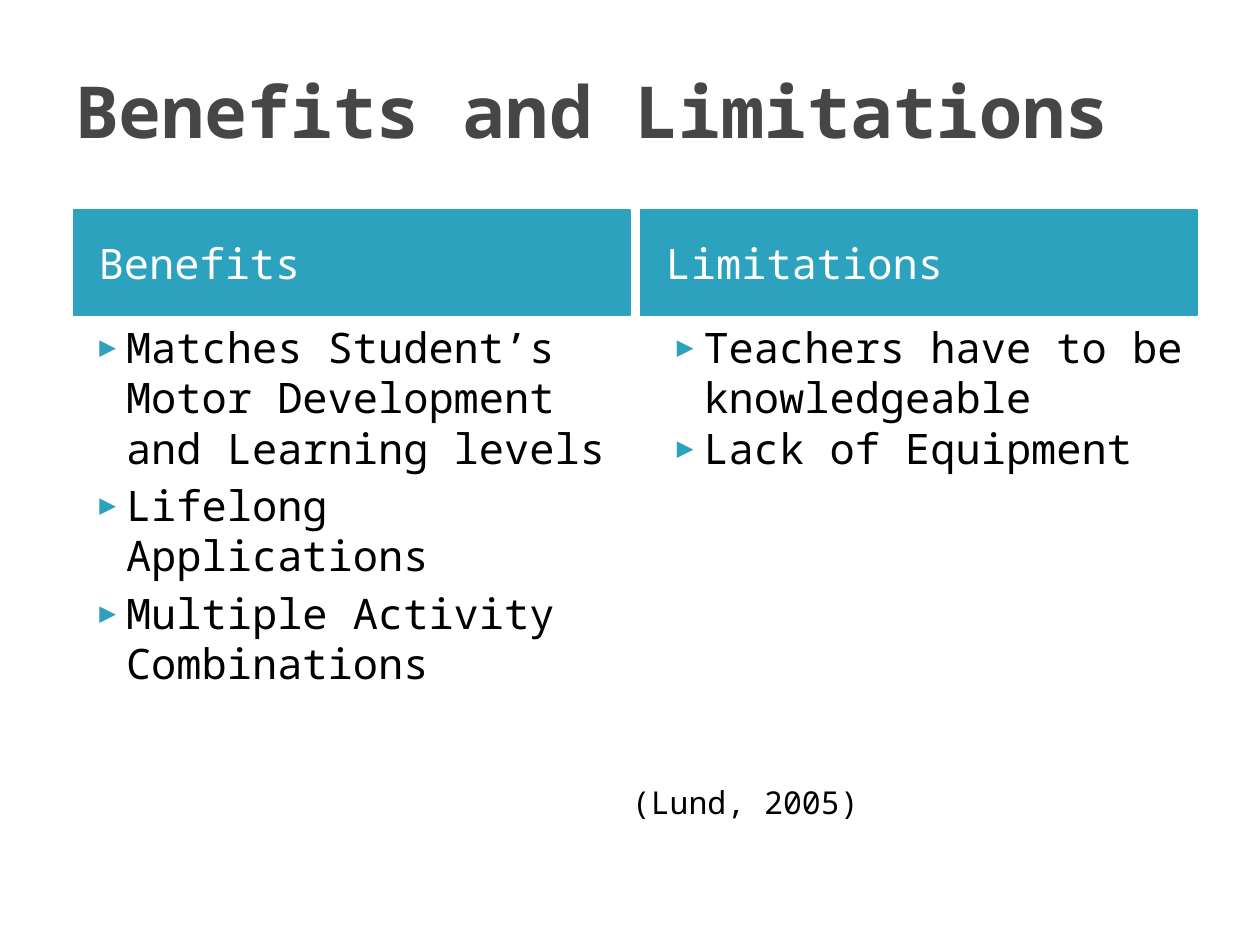
import pptx
import pptx.util
import pptx.dml.color
import pptx.enum.text
import pptx.oxml
import pptx.oxml.ns

Pt = pptx.util.Pt
Anchor = pptx.enum.text.MSO_ANCHOR
Fit = pptx.enum.text.MSO_AUTO_SIZE
Align = pptx.enum.text.PP_ALIGN


class Deck:
    """Holds the style and the current slide, with a method per kind of element."""

    font = "Noto Sans Mono"
    hues = {"title": "464646", "teal": "2DA2BF", "white": "FFFFFF", "black": "000000"}

    def __init__(self, wide, high):
        self.prs = pptx.Presentation()
        self.prs.slide_width, self.prs.slide_height = Pt(wide), Pt(high)

    def start(self, layout):
        self.slide = self.prs.slides.add_slide(self.prs.slide_layouts[layout])
        self.holders = {p.placeholder_format.idx: p for p in self.slide.placeholders}

    def hue(self, name):
        return pptx.dml.color.RGBColor.from_string(self.hues[name])

    def apply(self, item, values):
        for name, value in values.items():
            setattr(item, name, value)

    def place(self, shape, box):
        names = ("left", "top", "width", "height")
        self.apply(shape, dict(zip(names, map(Pt, box))))

    def fill(self, shape, lines, size, hue, bold=False, gap=0, bullet=False, **frame):
        text = shape.text_frame
        self.apply(text, {"word_wrap": True, "auto_size": Fit.NONE, **frame})
        for i, line in enumerate(lines):
            para = text.add_paragraph() if i else text.paragraphs[0]
            if bullet:
                self.mark(para)
            self.apply(para, {"alignment": Align.LEFT, "space_before": Pt(gap if i else 0)})
            run = para.add_run()
            run.text = line
            self.apply(run.font, {"name": self.font, "size": Pt(size), "bold": bold})
            run.font.color.rgb = self.hue(hue)

    def mark(self, para):
        props = para._p.get_or_add_pPr()
        props.set("marL", str(Pt(28.8)))
        props.set("indent", str(-Pt(20.2)))
        space = pptx.oxml.ns.nsdecls("a")
        for part in (
            f'<a:buClr {space}><a:srgbClr val="{self.hues["teal"]}"/></a:buClr>',
            f'<a:buSzPct {space} val="68000"/>',
            f'<a:buFont {space} typeface="{self.font}"/>',
            f'<a:buChar {space} char="▶"/>',
        ):
            props.append(pptx.oxml.parse_xml(part))

    def title(self, words, box):
        shape = self.slide.shapes.title
        self.place(shape, box)
        self.fill(shape, [words], 41, "title", bold=True, vertical_anchor=Anchor.MIDDLE)

    def header(self, idx, words, box):
        shape = self.holders[idx]
        self.place(shape, box)
        shape.fill.solid()
        shape.fill.fore_color.rgb = shape.line.color.rgb = self.hue("teal")
        shape.line.width = Pt(0.75)
        self.fill(shape, [words], 24, "white", margin_left=Pt(14.4),
                  vertical_anchor=Anchor.MIDDLE)

    def items(self, idx, lines, box, gap):
        shape = self.holders[idx]
        self.place(shape, box)
        self.fill(shape, lines, 24, "black", gap=gap, bullet=True,
                  vertical_anchor=Anchor.TOP)

    def note(self, words, box):
        shape = self.slide.shapes.add_textbox(*map(Pt, box))
        self.fill(shape, [words], 18, "black", auto_size=Fit.SHAPE_TO_FIT_TEXT)


def main():
    """Build the slide and save it."""
    deck = Deck(720, 540)
    deck.start(4)
    deck.title("Benefits and Limitations", (36, 18, 648, 90))
    wide, top, high = 318, 120, 60
    columns = (
        (1, 42, 36, 4, "Benefits", [
            "Matches Student’s Motor Development and Learning levels",
            "Lifelong Applications",
            "Multiple Activity Combinations",
        ]),
        (3, 366, 366, 0, "Limitations", [
            "Teachers have to be knowledgeable",
            "Lack of Equipment",
        ]),
    )
    for idx, head, left, gap, name, lines in columns:
        deck.header(idx, name, (head, top, wide, high))
        deck.items(idx + 1, lines, (left, top + high, wide, 310), gap)
    deck.note("(Lund, 2005)", (354, 444, 270, 29))
    deck.prs.save("out.pptx")


if __name__ == "__main__":
    main()
